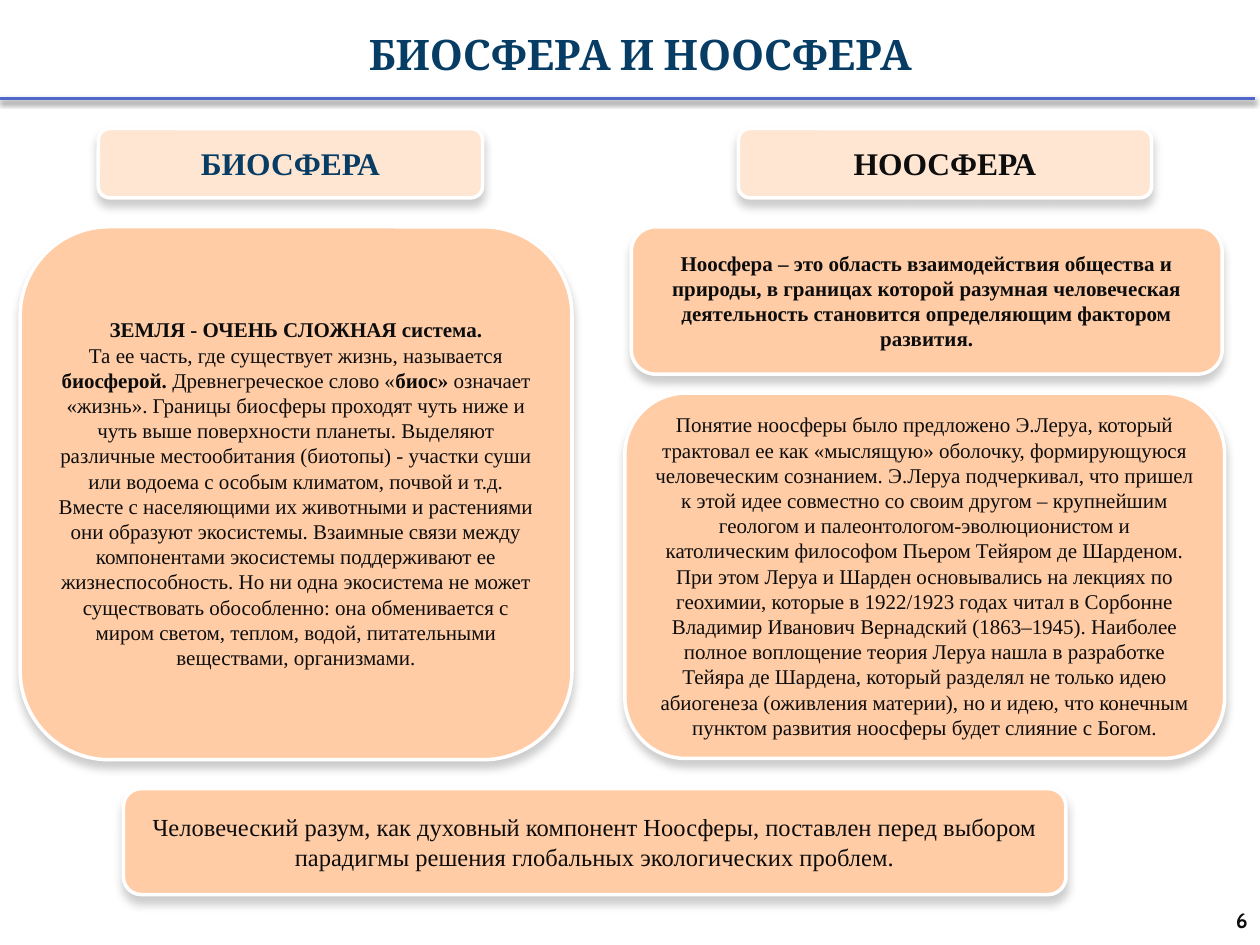
from lxml.etree import SubElement
from pptx import Presentation
from pptx.dml.color import RGBColor
from pptx.enum.shapes import MSO_CONNECTOR as Connector, MSO_SHAPE as Shape
from pptx.enum.text import MSO_ANCHOR as Anchor, PP_ALIGN as Align
from pptx.oxml.ns import qn
from pptx.util import Inches, Pt

THEME = {
    "navy": "073C65", "ink": "0D0D0D", "rule": "4E67C8", "white": "FFFFFF",
    "pale": "FFE6D3", "peach": "FFCCA6", "shadow": "000000",
    "title_font": "Cambria", "body_font": "Times New Roman", "number_font": "Cabin",
    "title": 24, "heading": 18, "conclusion": 14, "body": 12,
}

TITLE = "БИОСФЕРА И НООСФЕРА"
PAGE_NUMBER = "6"

# A text is a list of paragraphs; a paragraph is a list of (words, bold) spans.
BIOSPHERE = [
    [("ЗЕМЛЯ - ОЧЕНЬ СЛОЖНАЯ система.", True)],
    [
        ("Та ее часть, где существует жизнь, называется ", False),
        ("биосферой. ", True),
        ("Древнегреческое слово «", False),
        ("биос»", True),
        (" означает «жизнь». Границы биосферы проходят чуть ниже и чуть выше "
         "поверхности планеты. Выделяют различные местообитания (биотопы) - участки "
         "суши или водоема с особым климатом, почвой и т.д. Вместе с населяющими их "
         "животными и растениями они образуют экосистемы. Взаимные связи между "
         "компонентами экосистемы поддерживают ее жизнеспособность. Но ни одна "
         "экосистема не может существовать обособленно: она обменивается с миром "
         "светом, теплом, водой, питательными веществами, организмами.", False),
    ],
]
DEFINITION = [[(
    "Ноосфера – это область взаимодействия общества и природы, в границах которой "
    "разумная человеческая деятельность становится определяющим фактором развития.",
    True)]]
HISTORY = [[(
    "Понятие ноосферы было предложено Э.Леруа, который трактовал ее как «мыслящую» "
    "оболочку, формирующуюся человеческим сознанием. Э.Леруа подчеркивал, что пришел "
    "к этой идее совместно со своим другом – крупнейшим геологом и "
    "палеонтологом-эволюционистом и католическим философом Пьером Тейяром де "
    "Шарденом. При этом Леруа и Шарден основывались на лекциях по геохимии, которые "
    "в 1922/1923 годах читал в Сорбонне Владимир Иванович Вернадский (1863–1945). "
    "Наиболее полное воплощение теория Леруа нашла в разработке Тейяра де Шардена, "
    "который разделял не только идею абиогенеза (оживления материи), но и идею, что "
    "конечным пунктом развития ноосферы будет слияние с Богом.", False)]]
CONCLUSION = [[(
    "Человеческий разум, как духовный компонент Ноосферы, поставлен перед выбором "
    "парадигмы решения глобальных экологических проблем.", False)]]

HEADING_TOP, HEADING_HEIGHT, PANEL_TOP = 1.02, 0.55, 1.8

# (left, top, width, height), fill, text, size, colour
CARDS = [
    ((0.78, HEADING_TOP, 3.05, HEADING_HEIGHT), "pale",
     [[("БИОСФЕРА", True)]], "heading", "navy"),
    ((5.86, HEADING_TOP, 3.28, HEADING_HEIGHT), "pale",
     [[("НООСФЕРА", True)]], "heading", "ink"),
    ((5.01, PANEL_TOP, 4.69, 1.17), "peach", DEFINITION, "body", "ink"),
    ((4.96, 3.12, 4.76, 2.9), "peach", HISTORY, "body", "ink"),
    ((0.98, 6.26, 7.48, 0.84), "peach", CONCLUSION, "conclusion", "ink"),
    ((0.16, PANEL_TOP, 4.38, 4.23), "peach", BIOSPHERE, "body", "ink"),
]


def color(name):
    return RGBColor.from_string(THEME[name])


def write(shape, text, *, size, ink="ink", font="body_font", align=Align.CENTER,
          anchor=Anchor.MIDDLE):
    frame = shape.text_frame
    frame.word_wrap = True
    frame.vertical_anchor = anchor
    for index, spans in enumerate(text):
        para = frame.add_paragraph() if index else frame.paragraphs[0]
        para.alignment = align
        for words, bold in spans:
            span = para.add_run()
            span.text = words
            span.font.name = THEME[font]
            span.font.size = Pt(THEME[size])
            span.font.bold = bold
            span.font.color.rgb = color(ink)


def add_shadow(effects, opacity, blur, distance):
    """Drop a shadow straight down; opacity in percent, lengths in points."""
    outer = SubElement(effects, qn("a:outerShdw"), blurRad=str(Pt(blur)),
                       dist=str(Pt(distance)), dir="5400000", rotWithShape="0")
    tint = SubElement(outer, qn("a:srgbClr"), val=THEME["shadow"])
    SubElement(tint, qn("a:alpha"), val=str(opacity * 1000))


def add_rule(page):
    y = Inches(0.78)
    rule = page.shapes.add_connector(Connector.STRAIGHT, 0, y, Inches(9.96), y)
    rule.line.color.rgb = color("rule")
    rule.line.width = Pt(2)
    properties = rule._element.spPr
    add_shadow(SubElement(properties, qn("a:effectLst")), 45, 3.1, 1.8)


def add_label(page, place, words, **style):
    box = page.shapes.add_textbox(*map(Inches, place))
    write(box, [[(words, True)]], **style)


def add_card(page, place, fill, text, size, ink):
    card = page.shapes.add_shape(Shape.ROUNDED_RECTANGLE, *map(Inches, place))
    card.fill.solid()
    card.fill.fore_color.rgb = color(fill)
    card.line.color.rgb = color("white")
    card.line.width = Pt(2)
    card.shadow.inherit = False
    add_shadow(card._element.spPr.find(qn("a:effectLst")), 20, 5, 4)
    write(card, text, size=size, ink=ink)


def main():
    deck = Presentation()
    deck.slide_width, deck.slide_height = Inches(10), Inches(7.5)
    page = deck.slides.add_slide(deck.slide_layouts[6])
    add_rule(page)
    add_label(page, (9.38, 7.1, 0.62, 0.4), PAGE_NUMBER, size="body",
              font="number_font", align=Align.RIGHT)
    add_label(page, (0.39, 0.18, 9.38, 0.81), TITLE, size="title", ink="navy",
              font="title_font", anchor=Anchor.TOP)
    for card in CARDS:
        add_card(page, *card)
    deck.save("out.pptx")


if __name__ == "__main__":
    main()
